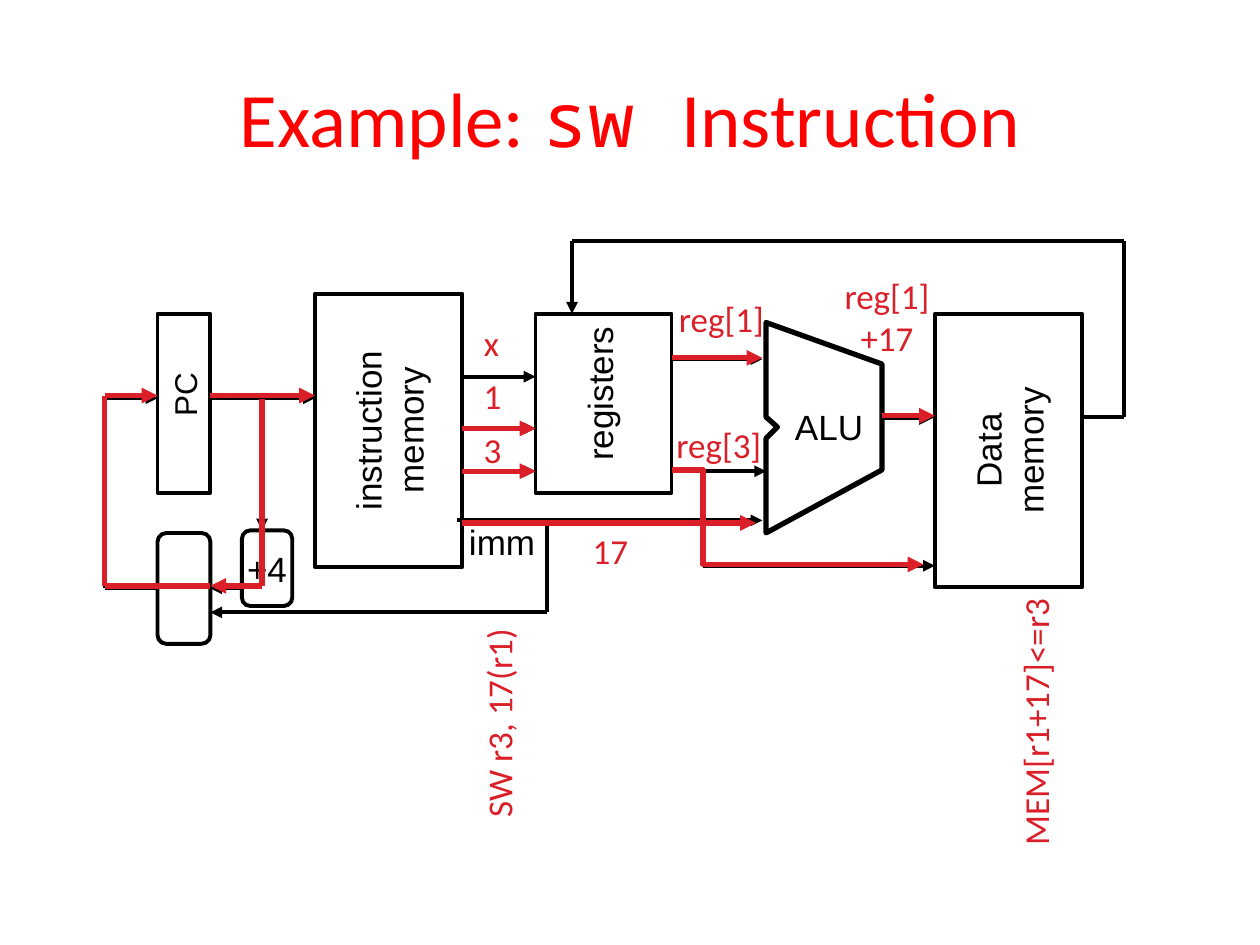
import itertools
from dataclasses import dataclass

import lxml.etree
import pptx
import pptx.dml.color
import pptx.enum.shapes
import pptx.enum.text
import pptx.oxml.ns
import pptx.util

Inches = pptx.util.Inches
Pt = pptx.util.Pt
RGB = pptx.dml.color.RGBColor.from_string
SHAPES = pptx.enum.shapes.MSO_SHAPE
ALIGN = pptx.enum.text.PP_ALIGN
ANCHOR = pptx.enum.text.MSO_ANCHOR
qn = pptx.oxml.ns.qn


@dataclass(frozen=True)
class Theme:
    ink: str = "000000"
    paper: str = "FFFFFF"
    active: str = "DA1F28"
    heading: str = "FF0000"
    block_font: str = "Arial"
    body_font: str = "Calibri"
    code_font: str = "Noto Sans Mono"
    title_size: float = 44
    label_size: float = 20
    small_size: float = 18
    thin: float = 2.25
    thick: float = 3


class DatapathSlide:
    """Draws the blocks, wires and labels of a processor datapath on one slide."""

    def __init__(self, deck, theme):
        self.theme = theme
        self.slide = deck.slides.add_slide(deck.slide_layouts[5])
        self.shapes = self.slide.shapes

    def add_run(self, paragraph, text, font, size, color):
        run = paragraph.add_run()
        run.text = text
        run.font.name = font
        run.font.size = Pt(size)
        run.font.color.rgb = RGB(color)

    def title(self, parts):
        heading = self.shapes.title
        heading.left, heading.top = Inches(0.5), Inches(0.3)
        heading.width, heading.height = Inches(9), Inches(1.25)
        frame = heading.text_frame
        frame.vertical_anchor = ANCHOR.MIDDLE
        paragraph = frame.paragraphs[0]
        paragraph.alignment = ALIGN.CENTER
        for text, font in parts:
            self.add_run(paragraph, text, font, self.theme.title_size, self.theme.heading)

    def style_line(self, line, color, width):
        line.color.rgb = RGB(color)
        line.width = Pt(width)

    def add_head(self, shape):
        outline = shape.element.spPr.find(qn("a:ln"))
        lxml.etree.SubElement(outline, qn("a:tailEnd"), type="triangle")

    def block(self, at, lines=(), rotation=0, rounded=False, filled=True):
        preset = SHAPES.ROUNDED_RECTANGLE if rounded else SHAPES.RECTANGLE
        shape = self.shapes.add_shape(preset, *map(Inches, at))
        shape.shadow.inherit = False
        shape.rotation = rotation
        if rounded:
            shape.adjustments[0] = 0.167
        if filled:
            shape.fill.solid()
            shape.fill.fore_color.rgb = RGB(self.theme.paper)
        else:
            shape.fill.background()
        self.style_line(shape.line, self.theme.ink, self.theme.thin)
        frame = shape.text_frame
        frame.word_wrap = False
        frame.vertical_anchor = ANCHOR.MIDDLE
        for index, text in enumerate(lines):
            paragraph = frame.add_paragraph() if index else frame.paragraphs[0]
            paragraph.alignment = ALIGN.CENTER
            self.add_run(paragraph, text, self.theme.block_font,
                         self.theme.label_size, self.theme.ink)
        return shape

    def label(self, at, lines, rotation=0, active=False, size=None):
        box = self.shapes.add_textbox(*map(Inches, at))
        box.rotation = rotation
        frame = box.text_frame
        frame.word_wrap = False
        frame.auto_size = pptx.enum.text.MSO_AUTO_SIZE.SHAPE_TO_FIT_TEXT
        frame.vertical_anchor = ANCHOR.MIDDLE
        paragraph = frame.paragraphs[0]
        paragraph.alignment = ALIGN.CENTER
        font = self.theme.body_font if active else self.theme.block_font
        color = self.theme.active if active else self.theme.ink
        for index, text in enumerate(lines):
            if index:
                paragraph.add_line_break()
            self.add_run(paragraph, text, font, size or self.theme.label_size, color)

    def wire(self, *points, active=False, head=True, width=None):
        color = self.theme.active if active else self.theme.ink
        width = width or (self.theme.thick if active else self.theme.thin)
        segments = []
        for start, end in itertools.pairwise(points):
            segment = self.shapes.add_connector(
                pptx.enum.shapes.MSO_CONNECTOR.STRAIGHT, *map(Inches, start + end))
            self.style_line(segment.line, color, width)
            lxml.etree.SubElement(segment.element.spPr, qn("a:effectLst"))
            segments.append(segment)
        if head:
            self.add_head(segments[-1])
        return segments

    def outline(self, points, color, close=False, head=False):
        corners = [(Inches(x), Inches(y)) for x, y in points]
        builder = self.shapes.build_freeform(*corners[0])
        builder.add_line_segments(corners[1:], close=close)
        shape = builder.convert_to_shape()
        shape.shadow.inherit = False
        shape.fill.background()
        self.style_line(shape.line, color, self.theme.thick)
        if head:
            self.add_head(shape)


def draw_datapath(page):
    theme = page.theme
    page.block((1.25, 2.49, 0.42, 1.42), filled=False)
    page.block((2, 2.83, 2.17, 1.17), ("instruction", "memory"), rotation=270)
    page.block((1.92, 4.21, 0.4, 0.6), ("+4",), rounded=True)
    page.block((4.25, 2.49, 1.08, 1.42))
    page.label((4.12, 2.91, 1.27, 0.43), ("registers",), rotation=270)
    page.block((6.92, 2.99, 2.17, 1.17), ("Data", "memory"), rotation=270)
    pc_mux = page.block((1.25, 4.23, 0.42, 0.88), rounded=True)
    page.outline([(6.08, 2.56), (7, 2.89), (7, 3.73), (6.08, 4.23),
                  (6.08, 3.48), (6.17, 3.39), (6.08, 3.31)], theme.ink, close=True)
    page.label((6.21, 3.17, 0.74, 0.43), ("ALU",))
    page.label((3.62, 4.08, 0.73, 0.43), ("imm",))

    page.wire((1.67, 3.16), (2.5, 3.16))
    for field_y in (2.99, 3.4, 3.74):
        page.wire((3.67, field_y), (4.25, field_y))
    page.wire((7, 3.31), (7.42, 3.31), width=theme.thick)
    page.wire((5.33, 3.74), (6.08, 3.74))
    page.wire((3.63, 4.13), (6.05, 4.13))
    page.wire((5.33, 2.85), (6.05, 2.85))
    page.wire((5.58, 3.74), (5.58, 4.08), head=False)
    page.wire((5.58, 4.16), (5.58, 4.49), (7.42, 4.49))
    page.wire((8.58, 3.31), (8.92, 3.31), (8.92, 1.91), (4.54, 1.91), (4.54, 2.49))
    page.wire((2.08, 3.16), (2.08, 4.21))
    page.wire((4.34, 4.13), (4.34, 4.86), (1.67, 4.86))
    increment = page.wire((1.92, 4.67), (1.67, 4.67))
    increment[0].end_connect(pc_mux, 3)
    next_pc = page.wire((1.25, 4.67), (0.83, 4.67), (0.83, 3.16), (1.25, 3.16))
    next_pc[0].begin_connect(pc_mux, 1)


def draw_store_path(page):
    for route in (
        [(1.67, 3.14), (2.5, 3.14)],
        [(7, 3.3), (7.42, 3.3)],
        [(3.67, 3.4), (4.25, 3.4)],
        [(3.67, 3.74), (4.25, 3.74)],
        [(3.67, 4.15), (6, 4.15)],
        [(5.33, 2.84), (6.05, 2.84)],
        [(2.08, 3.17), (2.08, 4.65), (1.67, 4.65)],
        [(1.67, 4.65), (0.83, 4.65), (0.83, 3.14), (1.25, 3.14)],
    ):
        page.wire(*route, active=True)
    page.outline([(5.33, 3.73), (5.58, 3.73), (5.58, 4.48), (7.33, 4.48)],
                 page.theme.active, head=True)
    for at, lines, rotation in (
        ((3.74, 2.5, 0.32, 0.44), ("x",), 0),
        ((3.73, 2.92, 0.36, 0.43), ("1",), 0),
        ((3.73, 3.35, 0.36, 0.43), ("3",), 0),
        ((4.6, 4.15, 0.49, 0.44), ("17",), 0),
        ((5.27, 2.31, 0.91, 0.43), ("reg[1]",), 0),
        ((5.25, 3.31, 0.91, 0.43), ("reg[3]",), 0),
        ((6.6, 2.13, 0.88, 0.77), ("reg[1]", "+17"), 0),
        ((3.1, 5.52, 1.71, 0.44), ("SW r3, 17(r1)",), 270),
        ((7.13, 5.51, 2.17, 0.44), ("MEM[r1+17]<=r3",), 270),
    ):
        page.label(at, lines, rotation, active=True)


def main():
    deck = pptx.Presentation()
    deck.slide_width, deck.slide_height = Inches(10), Inches(7.5)
    theme = Theme()
    page = DatapathSlide(deck, theme)
    page.title([("Example: ", theme.body_font), ("sw ", theme.code_font),
                ("Instruction", theme.body_font)])
    draw_datapath(page)
    draw_store_path(page)
    page.label((1.19, 2.93, 0.55, 0.4), ("PC",), rotation=270, size=theme.small_size)
    deck.save("out.pptx")


if __name__ == "__main__":
    main()
